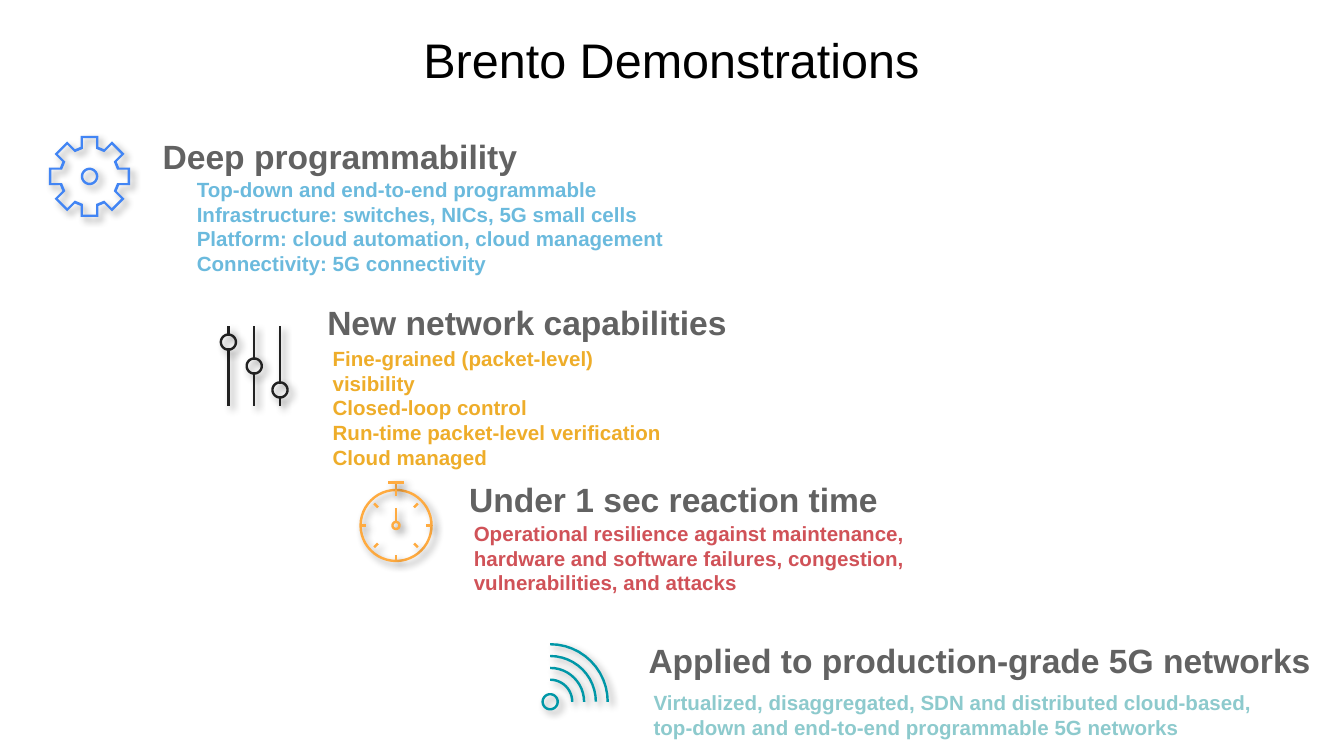
import math
import pptx
import pptx.dml.color
import pptx.enum.text
import pptx.util
from lxml import etree

HUES = {"ink": "000000", "head": "626262", "sky": "6BBADD", "gold": "EEAD2A",
        "red": "D05258", "mint": "8DCACD", "blue": "4285F4", "dark": "212121",
        "amber": "FFAB40", "teal": "0097A7"}
WIDE = 10
HIGH = WIDE * 9 / 16
COLS, ROWS = 100, 56.25  # square cells, a tenth of an inch each
LINE = 0.18  # thickness of icon strokes, in cells
SHADE = ('<a:effectLst xmlns:a="http://schemas.openxmlformats.org/drawingml/2006/main">'
         '<a:outerShdw blurRad="50800" dist="38100" dir="2700000" algn="tl" rotWithShape="0">'
         '<a:srgbClr val="000000"><a:alpha val="40000"/></a:srgbClr>'
         '</a:outerShdw></a:effectLst>')


def turn(points, mid, angle):
    """Rotate points given around zero, then move them to mid."""
    a = math.radians(angle)
    c, s = math.cos(a), math.sin(a)
    return [(mid[0] + x * c - y * s, mid[1] + x * s + y * c) for x, y in points]


def arc(mid, r, start, end):
    steps = max(8, round(abs(end - start) / 7.5))
    return [turn([(r, 0)], mid, start + (end - start) * i / steps)[0]
            for i in range(steps + 1)]


def cog(mid, tip, half, base):
    """Closed outline of eight teeth."""
    tooth = [(-half, -base), (-half, -tip), (half, -tip), (half, -base)]
    edge = [p for i in range(8) for p in turn(tooth, mid, 45 * i)]
    return edge + edge[:1]


class Deck:
    def __init__(self):
        self.file = pptx.Presentation()
        self.file.slide_width = pptx.util.Inches(WIDE)
        self.file.slide_height = pptx.util.Inches(HIGH)
        self.slide = self.file.slides.add_slide(self.file.slide_layouts[6])

    def x(self, cols):
        return round(self.file.slide_width * cols / COLS)

    def y(self, rows):
        return round(self.file.slide_height * rows / ROWS)

    def text(self, box, lines, hue, size=11, bold=True, dent=0, mid=False):
        left, top, wide, high = box
        shape = self.slide.shapes.add_textbox(self.x(left), self.y(top),
                                              self.x(wide), self.y(high))
        frame = shape.text_frame
        form = {"word_wrap": True, "margin_left": self.x(0.7), "margin_right": self.x(0.7),
                "margin_top": self.y(0.4), "margin_bottom": self.y(0.4)}
        if mid:
            form["vertical_anchor"] = pptx.enum.text.MSO_ANCHOR.MIDDLE
        for key, value in form.items():
            setattr(frame, key, value)
        frame.text = "\n".join(lines)
        look = {"name": "Arial", "size": pptx.util.Pt(size), "bold": bold}
        for para in frame.paragraphs:
            if mid:
                para.alignment = pptx.enum.text.PP_ALIGN.CENTER
            if dent:
                para._p.get_or_add_pPr().set("marL", str(self.x(dent)))
            font = para.runs[0].font
            for key, value in look.items():
                setattr(font, key, value)
            font.color.rgb = pptx.dml.color.RGBColor.from_string(HUES[hue])

    def shape(self, points, hue):
        spots = [(self.x(a), self.y(b)) for a, b in points]
        pen = self.slide.shapes.build_freeform(*spots[0])
        pen.add_line_segments(spots[1:], close=True)
        form = pen.convert_to_shape()
        form.fill.solid()
        form.fill.fore_color.rgb = pptx.dml.color.RGBColor.from_string(HUES[hue])
        form.line.fill.background()
        form._element.spPr.append(etree.fromstring(SHADE))

    def band(self, mid, r, hue, start=0, end=360):
        self.shape(arc(mid, r, start, end) + arc(mid, r - LINE, end, start), hue)

    def bar(self, mid, near, far, hue, angle=0):
        """Stroke pointing away from mid; angle 0 is straight up."""
        h = LINE / 2
        self.shape(turn([(-h, -near), (-h, -far), (h, -far), (h, -near)], mid, angle), hue)

    def gear(self, mid, hue):
        self.shape(cog(mid, 3.02, 0.66, 2.2) + cog(mid, 2.84, 0.5, 2.05)[::-1], hue)
        self.band(mid, 0.65, hue)

    def mixer(self, left, top, hue):
        r, high = 0.65, 6.0
        for i in range(3):
            mid = (left + 1.92 * i, top + 1.22 + 1.78 * i)
            self.bar(mid, r - LINE, mid[1] - top, hue)
            self.bar(mid, r - LINE, top + high - mid[1], hue, 180)
            self.band(mid, r, hue)

    def watch(self, mid, hue):
        self.band(mid, 2.73, hue)
        self.bar(mid, 2.6, 3.3, hue)
        self.bar((mid[0] - 0.6, mid[1] - 3.2), 0, 1.2, hue, 90)
        for i in range(8):
            near = 1.9 if i % 2 else 2.2
            self.bar(mid, near, near + 0.4, hue, 45 * i)
        self.bar(mid, 0.2, 1.3, hue)
        self.band(mid, 0.35, hue)

    def waves(self, mid, hue):
        for i in range(4):
            self.band(mid, 1.73 + 0.88 * i, hue, -90, 0)
        self.band(mid, 0.65, hue)


def main():
    deck = Deck()
    deck.text((6.1, 0.45, 87.8, 7.9), ["Brento Demonstrations"], "ink", 26, False, mid=True)
    deck.gear((6.67, 13.13), "blue")
    deck.mixer(17, 24.24, "dark")
    deck.watch((29.47, 39.1), "amber")
    deck.waves((40.94, 52.22), "teal")

    heads = [((11.4, 9.7, 32.4, 3.8), "Deep programmability"),
             ((23.65, 22.1, 35.1, 3.8), "New network capabilities"),
             ((34.2, 35.25, 33.2, 3.8), "Under 1 sec reaction time"),
             ((47.55, 47.2, 51.8, 3.8), "Applied to production-grade 5G networks")]
    for box, line in heads:
        deck.text(box, [line], "head", 18)

    deck.text((11.8, 12.77, 39.5, 8.2), [
        "Top-down and end-to-end programmable",
        "Infrastructure: switches, NICs, 5G small cells",
        "Platform: cloud automation, cloud management",
        "Connectivity: 5G connectivity"], "sky", dent=2.14)
    deck.text((24.05, 25.35, 27, 8.2), [
        "Fine-grained (packet-level) visibility",
        "Closed-loop control",
        "Run-time packet-level verification",
        "Cloud managed"], "gold")
    deck.text((34.55, 38.37, 35.5, 9.3), [
        "Operational resilience against maintenance, hardware and software failures, "
        "congestion, vulnerabilities, and attacks"], "red")
    deck.text((47.93, 50.93, 46.9, 7.8), [
        "Virtualized, disaggregated, SDN and distributed cloud-based, "
        "top-down and end-to-end programmable 5G networks"], "mint")
    deck.file.save("out.pptx")


if __name__ == "__main__":
    main()
